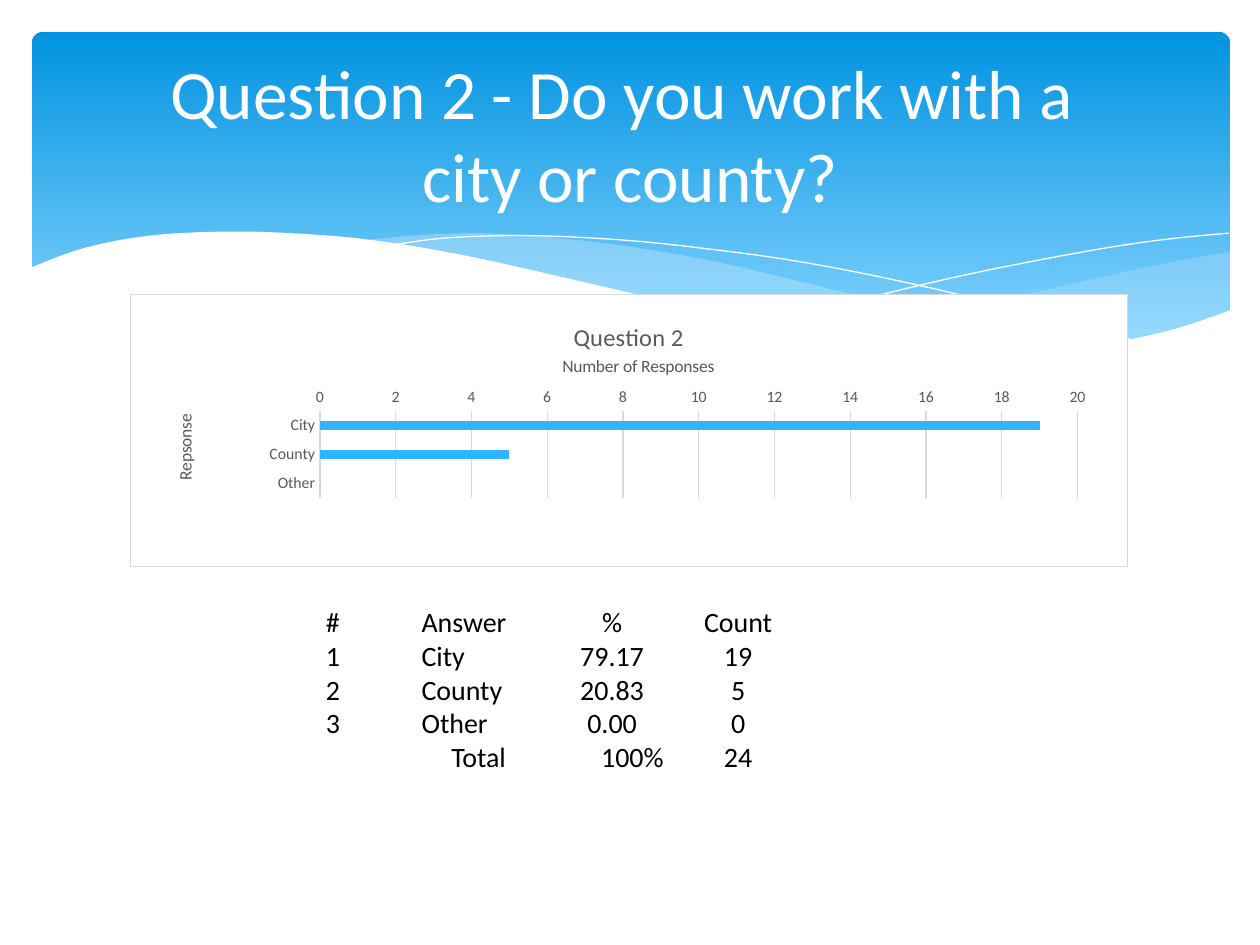
from dataclasses import dataclass

from lxml.etree import SubElement
from pptx import Presentation
from pptx.chart.data import CategoryChartData
from pptx.dml.color import RGBColor
from pptx.enum.chart import XL_CHART_TYPE, XL_TICK_MARK
from pptx.enum.shapes import MSO_SHAPE
from pptx.enum.text import MSO_ANCHOR, PP_ALIGN
from pptx.oxml import parse_xml
from pptx.oxml.ns import nsdecls, qn
from pptx.util import Cm, Pt


@dataclass(frozen=True)
class Theme:
    font: str = "Calibri"
    white: str = "FFFFFF"
    black: str = "000000"
    sky_top: str = "0293E0"
    sky_bottom: str = "83D3FE"
    wave: str = "C6E7FC"
    bar: str = "31B6FD"
    chart_text: str = "595959"
    rule: str = "D9D9D9"
    title_size: float = 39.6
    body_size: float = 16
    chart_title_size: float = 14
    axis_title_size: float = 10
    tick_size: float = 9


THEME = Theme()

TITLE_LINES = ["Question 2 - Do you work with a ", "city or county?"]
CHART_TITLE = "Question 2"
CATEGORY_TITLE = "Repsonse"
VALUE_TITLE = "Number of Responses"
RESPONSES = {"City": 19, "County": 5, "Other": 0}

# Tab stops in cm with their alignment
COLUMNS = [(1.93, "l"), (5.77, "ctr"), (8.31, "ctr")]
TOTAL_COLUMNS = [(3.63, "r"), (6.18, "ctr"), (8.31, "ctr")]
ANSWER_ROWS = [
    (("#", "Answer", "%", "Count"), COLUMNS),
    (("1", "City", "79.17", "19"), COLUMNS),
    (("2", "County", "20.83", "5"), COLUMNS),
    (("3", "Other", "0.00", "0"), COLUMNS),
    (("", "Total", "100%", "24"), TOTAL_COLUMNS),
]

# Key points in cm of the curved edges; each edge is smoothed on its own
RIGHT_WAVE = [
    [(24.79, 5.08), (23.75, 5.26), (21.87, 5.66), (19.79, 6.15), (18.52, 6.43), (16.79, 6.73)],
    [(16.79, 6.73), (18.26, 6.91), (19.84, 7.04), (21.21, 7.04), (22.58, 6.91),
     (23.75, 6.65), (24.79, 6.27)],
]
MIDDLE_WAVE = [
    [(22.68, 6.93), (20.5, 6.6), (17.93, 6.1), (15.98, 5.64), (14.45, 5.28), (12.75, 4.98),
     (11.23, 4.8), (9.65, 4.7), (8.33, 4.75), (7.26, 4.85)],
    [(7.26, 4.85), (9.19, 5.16), (11.4, 5.64), (13.46, 6.1), (15.7, 6.55), (17.65, 6.86),
     (19.33, 7.04), (20.78, 7.06), (22.68, 6.93)],
]
WHITE_WAVE = [
    [(24.82, 6.25), (23.62, 6.65), (22.23, 6.93), (20.55, 7.04), (18.44, 6.91), (16.46, 6.65),
     (14.1, 6.22), (11.35, 5.59), (9.27, 5.13), (7.42, 4.83), (5.84, 4.7), (4.5, 4.67),
     (3.02, 4.75), (1.7, 5), (0.58, 5.41)],
    [(0.58, 8.36), (24.82, 8.36)],
]
FALLING_LINE = [[(7.85, 4.95), (8.97, 4.8), (10.57, 4.75), (12.42, 4.83), (14.12, 5),
                 (16.15, 5.28), (18.47, 5.74), (21.11, 6.38), (23.04, 6.91)]]
RISING_LINE = [[(15.57, 6.53), (17.65, 5.97), (19.71, 5.49), (22, 5.05), (23.47, 4.83),
                (24.77, 4.7)]]


def color(value):
    return RGBColor.from_string(value)


def smooth(points, steps=6):
    """Return points along a Catmull-Rom curve through the key points."""
    if len(points) < 3:
        return points
    padded = [points[0], *points, points[-1]]
    curve = [points[0]]
    for a, b, c, d in zip(padded, padded[1:], padded[2:], padded[3:]):
        for t in (step / steps for step in range(1, steps + 1)):
            curve.append(tuple(
                q + (r - p) * t / 2 + (2 * p - 5 * q + 4 * r - s) * t**2 / 2
                + (3 * q - p - 3 * r + s) * t**3 / 2
                for p, q, r, s in zip(a, b, c, d)))
    return curve


def add_curve(slide, edges, fill=None, alpha=100):
    """Draw a filled wave, or a white hairline when no fill is given."""
    points = [(Cm(x), Cm(y)) for edge in edges for x, y in smooth(edge)]
    builder = slide.shapes.build_freeform(*points[0])
    builder.add_line_segments(points[1:], close=fill is not None)
    shape = builder.convert_to_shape()
    shape.shadow.inherit = False
    if fill is None:
        shape.fill.background()
        shape.line.color.rgb = color(THEME.white)
        shape.line.width = Pt(0)
        return
    shape.fill.solid()
    shape.fill.fore_color.rgb = color(fill)
    shape.line.fill.background()
    if alpha < 100:
        rgb = shape.fill._xPr.find(qn("a:solidFill"))[0]
        SubElement(rgb, qn("a:alpha"), val=str(alpha * 1000))


def add_banner(slide):
    banner = slide.shapes.add_shape(
        MSO_SHAPE.ROUNDED_RECTANGLE, Cm(0.64), Cm(0.64), Cm(24.16), Cm(6.86))
    banner.adjustments[0] = 0.034
    banner.shadow.inherit = False
    banner.line.fill.background()
    banner.fill.gradient()
    banner.fill.gradient_angle = 270
    stops = [(0, THEME.sky_top), (0.9, THEME.sky_bottom)]
    for stop, (position, value) in zip(banner.fill.gradient_stops, stops):
        stop.position = position
        stop.color.rgb = color(value)


def style_font(font, size, value):
    font.name = THEME.font
    font.size = Pt(size)
    font.bold = False
    font.color.rgb = color(value)


def add_run(paragraph, text, size, value):
    run = paragraph.add_run()
    run.text = text
    style_font(run.font, size, value)


def set_layout(parent, index, x, y, size=None):
    """Place a chart part by fractions of the chart area."""
    for old in parent.findall(qn("c:layout")):
        parent.remove(old)
    values = {"xMode": "edge", "yMode": "edge", "x": x, "y": y}
    if size:
        values = {"layoutTarget": "inner", **values, "w": size[0], "h": size[1]}
    layout = parent.makeelement(qn("c:layout"))
    manual = SubElement(layout, qn("c:manualLayout"))
    for name, value in values.items():
        SubElement(manual, qn(f"c:{name}"), val=str(value))
    parent.insert(index, layout)


def set_chart_title(title, text, size, x, y):
    add_run(title.text_frame.paragraphs[0], text, size, THEME.chart_text)
    set_layout(title._element, 1, x, y)


def add_rule(line):
    line.color.rgb = color(THEME.rule)
    line.width = Pt(0.75)


def add_response_chart(slide):
    data = CategoryChartData()
    data.categories = list(RESPONSES)
    data.add_series("Series 1", list(RESPONSES.values()))
    chart = slide.shapes.add_chart(XL_CHART_TYPE.BAR_CLUSTERED, Cm(2.62), Cm(5.92),
                                   Cm(20.12), Cm(5.51), data).chart
    style_font(chart.font, 10, THEME.black)
    chart.has_legend = False
    set_chart_title(chart.chart_title, CHART_TITLE, THEME.chart_title_size, 0.44, 0.08)

    plot = chart.plots[0]
    plot.gap_width = 219
    plot.vary_by_categories = False
    bar_fill = plot.series[0].format.fill
    bar_fill.solid()
    bar_fill.fore_color.rgb = color(THEME.bar)

    category, value = chart.category_axis, chart.value_axis
    for axis in (category, value):
        axis.major_tick_mark = axis.minor_tick_mark = XL_TICK_MARK.NONE
        style_font(axis.tick_labels.font, THEME.tick_size, THEME.chart_text)
    category.reverse_order = True
    add_rule(category.format.line)
    value.minimum_scale, value.maximum_scale, value.major_unit = 0, 20, 2
    value.format.line.fill.background()
    add_rule(value.major_gridlines.format.line)
    set_chart_title(category.axis_title, CATEGORY_TITLE, THEME.axis_title_size, 0.04, 0.43)
    category.axis_title.text_frame._txBody.bodyPr.set("rot", "-5400000")
    set_chart_title(value.axis_title, VALUE_TITLE, THEME.axis_title_size, 0.43, 0.21)

    chart_part = chart._chartSpace.find(qn("c:chart"))
    set_layout(chart_part.find(qn("c:plotArea")), 0, 0.19, 0.43, (0.76, 0.32))
    chart_part.addnext(parse_xml(
        f'<c:spPr {nsdecls("c", "a")}>'
        f'<a:solidFill><a:srgbClr val="{THEME.white}"/></a:solidFill>'
        f'<a:ln w="{Pt(0.75)}"><a:solidFill><a:srgbClr val="{THEME.rule}"/></a:solidFill></a:ln>'
        '</c:spPr>'))


def add_title(slide):
    frame = slide.shapes.add_textbox(Cm(1.27), Cm(0.94), Cm(22.86), Cm(3.48)).text_frame
    frame.word_wrap = True
    frame.vertical_anchor = MSO_ANCHOR.MIDDLE
    paragraph = frame.paragraphs[0]
    paragraph.alignment = PP_ALIGN.CENTER
    for number, line in enumerate(TITLE_LINES):
        if number:
            paragraph.add_line_break()
        add_run(paragraph, line, THEME.title_size, THEME.white)


def add_answer_list(slide):
    frame = slide.shapes.add_textbox(Cm(6.32), Cm(12.07), Cm(12.7), Cm(3.68)).text_frame
    frame.word_wrap = True
    for number, (cells, columns) in enumerate(ANSWER_ROWS):
        paragraph = frame.add_paragraph() if number else frame.paragraphs[0]
        tabs = SubElement(paragraph._p.get_or_add_pPr(), qn("a:tabLst"))
        for position, alignment in columns:
            SubElement(tabs, qn("a:tab"), pos=str(Cm(position)), algn=alignment)
        add_run(paragraph, "\t".join(cells), THEME.body_size, THEME.black)


def main():
    presentation = Presentation()
    presentation.slide_width, presentation.slide_height = Cm(25.4), Cm(19.05)
    slide = presentation.slides.add_slide(presentation.slide_layouts[6])
    add_banner(slide)
    add_curve(slide, RIGHT_WAVE, THEME.wave, 29)
    add_curve(slide, MIDDLE_WAVE, THEME.wave, 40)
    add_curve(slide, FALLING_LINE)
    add_curve(slide, RISING_LINE)
    add_curve(slide, WHITE_WAVE, THEME.white)
    add_response_chart(slide)
    add_title(slide)
    add_answer_list(slide)
    presentation.save("out.pptx")


if __name__ == "__main__":
    main()
